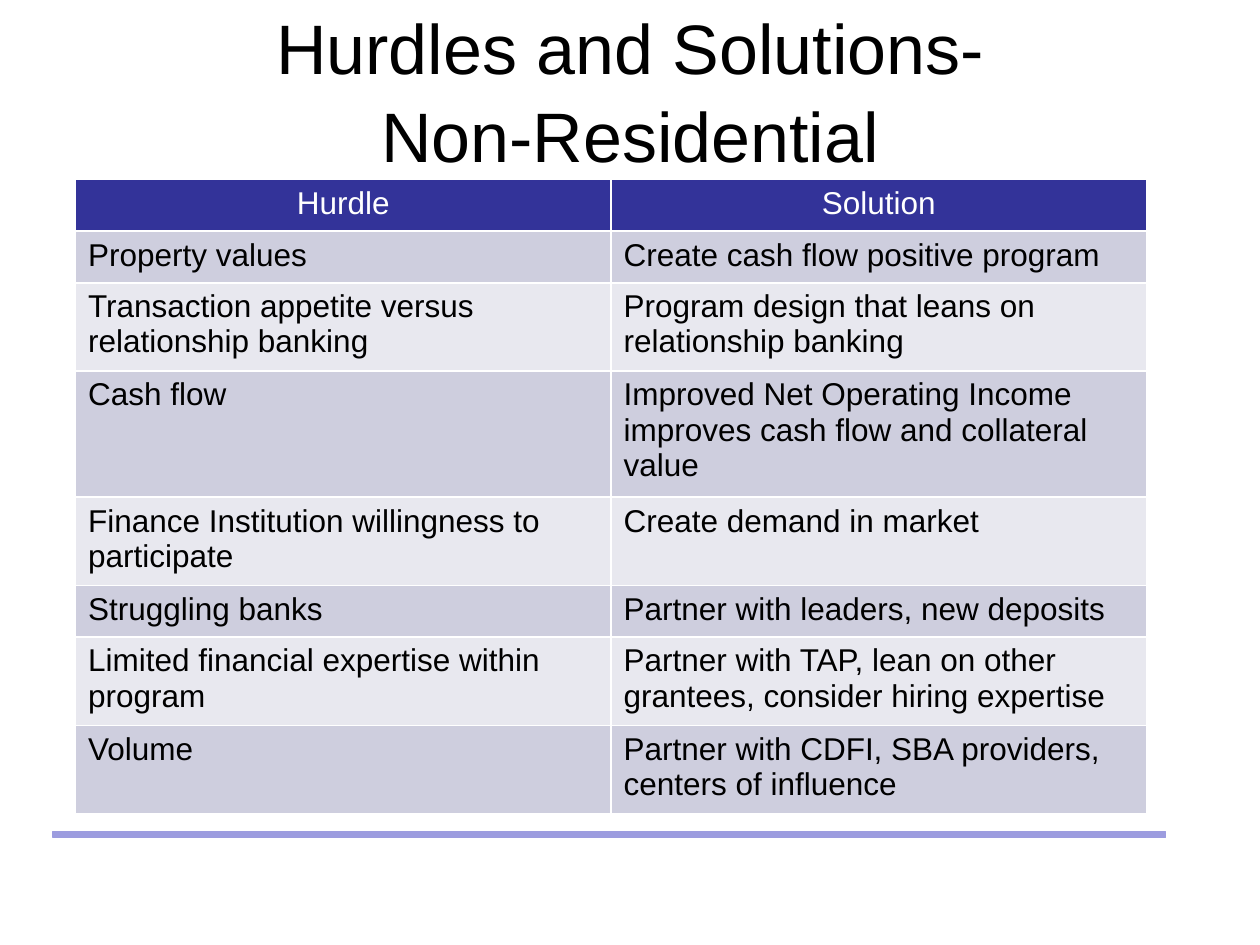
import dataclasses

import lxml.etree
import pptx
import pptx.dml.color
import pptx.enum.shapes
import pptx.enum.text
import pptx.oxml.ns
import pptx.util


@dataclasses.dataclass(frozen=True)
class Theme:
    """Colours, font and type sizes of the slide."""
    font: str = "Arial"
    title_size: int = 40
    cell_size: int = 18
    ink: str = "000000"
    paper: str = "FFFFFF"
    header: str = "333399"
    bands: tuple = ("CECEDE", "E8E8EF")
    rule: str = "9C9CDF"


THEME = Theme()
ALIGN = pptx.enum.text.PP_ALIGN
WIDTH, HEIGHT = pptx.util.Inches(10), pptx.util.Inches(7.5)
TITLE = "Hurdles and Solutions-\vNon-Residential"
ROWS = (
    ("Hurdle", "Solution"),
    ("Property values", "Create cash flow positive program"),
    ("Transaction appetite versus relationship banking",
     "Program design that leans on relationship banking"),
    ("Cash flow",
     "Improved Net Operating Income improves cash flow and collateral value"),
    ("Finance Institution willingness to participate", "Create demand in market"),
    ("Struggling banks", "Partner with leaders, new deposits"),
    ("Limited financial expertise within program",
     "Partner with TAP, lean on other grantees, consider hiring expertise"),
    ("Volume", "Partner with CDFI, SBA providers, centers of influence"),
)
ROW_LINES = (1, 1, 2, 3, 2, 1, 2, 2)


def rgb(value):
    """Turn a hex string into a colour."""
    return pptx.dml.color.RGBColor.from_string(value)


def share(x, y, w, h):
    """Turn shares of the slide's size into a box."""
    return int(x * WIDTH), int(y * HEIGHT), int(w * WIDTH), int(h * HEIGHT)


def write(tf, text, size, color=THEME.ink, align=ALIGN.LEFT, spacing=None):
    """Put formatted text in a text frame."""
    tf.word_wrap = True
    p = tf.paragraphs[0]
    p.text = text
    p.alignment = align
    p.line_spacing = spacing
    for r in p.runs:
        r.font.name = THEME.font
        r.font.size = pptx.util.Pt(size)
        r.font.color.rgb = rgb(color)


def border(cell, color, width=1):
    """Draw the four borders of a table cell."""
    qn = pptx.oxml.ns.qn
    props = cell._tc.get_or_add_tcPr()
    for i, side in enumerate(("a:lnL", "a:lnR", "a:lnT", "a:lnB")):
        ln = lxml.etree.Element(qn(side), w=str(pptx.util.Pt(width)))
        fill = lxml.etree.SubElement(ln, qn("a:solidFill"))
        lxml.etree.SubElement(fill, qn("a:srgbClr"), val=color)
        props.insert(i, ln)


def add_rule(s, box):
    """Draw the footer rule."""
    sp = s.shapes.add_shape(pptx.enum.shapes.MSO_SHAPE.RECTANGLE, *box)
    sp.shadow.inherit = False
    sp.fill.solid()
    sp.fill.fore_color.rgb = rgb(THEME.rule)
    sp.line.color.rgb = rgb(THEME.rule)
    sp.line.width = pptx.util.Pt(0.75)


def add_title(s, box):
    """Place the centred title."""
    tf = s.shapes.add_textbox(*box).text_frame
    tf.vertical_anchor = pptx.enum.text.MSO_ANCHOR.MIDDLE
    write(tf, TITLE, THEME.title_size, align=ALIGN.CENTER, spacing=1.05)


def add_hurdles(s, box):
    """Place the hurdle and solution table, with rows as tall as their lines."""
    x, y, w, h = box
    table = s.shapes.add_table(len(ROWS), len(ROWS[0]), x, y, w, h).table
    for column in table.columns:
        column.width = w // len(ROWS[0])
    for i, (row, lines) in enumerate(zip(ROWS, ROW_LINES)):
        table.rows[i].height = pptx.util.Inches(0.41 + (lines - 1) * 0.26)
        head = i == 0
        for j, text in enumerate(row):
            cell = table.cell(i, j)
            cell.fill.solid()
            cell.fill.fore_color.rgb = rgb(THEME.header if head else THEME.bands[(i - 1) % 2])
            border(cell, THEME.paper)
            write(cell.text_frame, text, THEME.cell_size,
                  color=THEME.paper if head else THEME.ink,
                  align=ALIGN.CENTER if head else ALIGN.LEFT)
            for r in cell.text_frame.paragraphs[0].runs:
                r.font.bold = False


def main():
    """Build and save the slide."""
    prs = pptx.Presentation()
    prs.slide_width, prs.slide_height = WIDTH, HEIGHT
    s = prs.slides.add_slide(prs.slide_layouts[6])
    add_rule(s, share(0.042, 0.88, 0.883, 0.0067))
    add_title(s, share(0.075, 0.01, 0.85, 0.167))
    add_hurdles(s, share(0.06, 0.19, 0.85, 0.64))
    prs.save("out.pptx")


if __name__ == "__main__":
    main()
